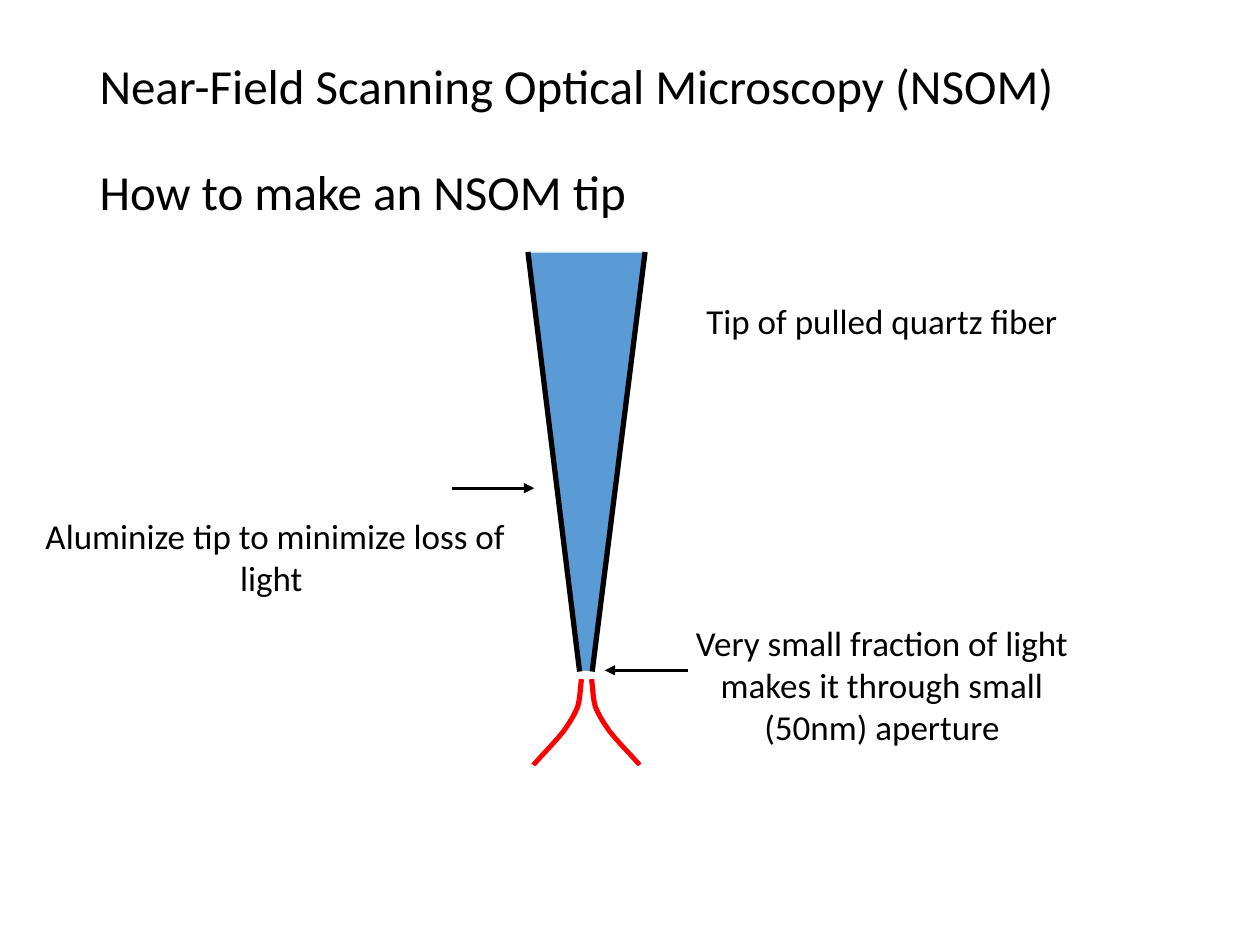
import pptx
import pptx.util
import pptx.dml.color
import pptx.enum.shapes
import pptx.enum.text
import pptx.oxml
import pptx.oxml.ns

Pt = pptx.util.Pt
Align = pptx.enum.text.PP_ALIGN
Anchor = pptx.enum.text.MSO_ANCHOR
RGB = pptx.dml.color.RGBColor.from_string

THEME = {
    "font": "Calibri", "head": 28, "label": 20,
    "ink": RGB("000000"), "glass": RGB("5B9BD5"),
    "light": RGB("FF0000"), "edge": RGB("FFFFFF"),
}

deck = pptx.Presentation()
deck.slide_width = pptx.util.Inches(10)
deck.slide_height = pptx.util.Inches(7.5)
unit = deck.slide_width // 100  # grid of 100 columns by 75 rows
slide = deck.slides.add_slide(deck.slide_layouts[5])
shapes = slide.shapes


def grid(*cells):
    return [round(cell * unit) for cell in cells]


def write(text, box, at, size, align=Align.CENTER, lead=1.0, gap=0):
    """Place the box on the grid and fill it, one paragraph per line of text."""
    box.left, box.top, box.width, box.height = grid(*at)
    frame = box.text_frame
    frame.text = text
    frame.word_wrap = True
    frame.vertical_anchor = Anchor.MIDDLE
    frame.auto_size = pptx.enum.text.MSO_AUTO_SIZE.NONE
    for i, para in enumerate(frame.paragraphs):
        para.alignment = align
        para.line_spacing = lead
        para.space_before = Pt(gap if i else 0)
        para.font.name = THEME["font"]
        para.font.size = Pt(size)
        para.font.color.rgb = THEME["ink"]


write("Near-Field Scanning Optical Microscopy (NSOM)\nHow to make an NSOM tip",
      shapes.title, (6.9, 4, 86.2, 14.5), THEME["head"],
      align=Align.LEFT, lead=0.9, gap=30)

# Fiber and the light leaving it, each laid down twice with a slight shift
mid, top, end = 46.5, 20, 53.3
wide, slim = 4.6, 0.5
bends = [  # Bezier pieces: distance from the fiber's axis, row
    [(0.4, 53.9), (0.5, 54.6), (0.5, 55.4), (0.7, 56.1)],
    [(0.7, 56.1), (1, 56.8), (1.3, 57.3), (1.8, 58)],
    [(1.8, 58), (2.4, 58.8), (3.8, 60.2), (4.2, 60.7)],
]
curve = [bends[0][0]]
for piece in bends:
    for t in (0.2, 0.4, 0.6, 0.8, 1):
        mix = ((1 - t)**3, 3 * t * (1 - t)**2, 3 * t**2 * (1 - t), t**3)
        curve.append([sum(m * p[axis] for m, p in zip(mix, piece))
                      for axis in (0, 1)])

for shift in (0, 0.1):
    axis = mid + shift
    rim = [grid(axis + dx, y) for dx, y in
           ((-wide, top), (-slim, end), (slim, end), (wide, top))]
    pen = shapes.build_freeform(*rim[0])
    pen.add_line_segments(rim[1:], close=True)
    fiber = pen.convert_to_shape()
    fiber.shadow.inherit = False
    fiber.fill.solid()
    fiber.fill.fore_color.rgb = THEME["glass"]
    fiber.line.color.rgb = THEME["edge"]
    fiber.line.width = Pt(0.75)

    rays = shapes.add_group_shape()
    for side in (-1, 1):
        dots = [grid(axis + side * dx, y) for dx, y in curve]
        pen = rays.shapes.build_freeform(*dots[0])
        pen.add_line_segments(dots[1:], close=False)
        ray = pen.convert_to_shape()
        ray.shadow.inherit = False
        ray.fill.background()
        ray.line.color.rgb = THEME["light"]
        ray.line.width = Pt(2.25)

# Arrows, then the aluminum coating on both sides of the fiber
for ends, width, arrow in (
    ((54.6, 53.2, 48, 53.2), 1.5, True),
    ((35.9, 38.75, 42.4, 38.75), 1.5, True),
    ((51.2, top, 47, end), 3, False),
    ((41.9, top, 46, end), 3, False),
):
    line = shapes.add_connector(
        pptx.enum.shapes.MSO_CONNECTOR.STRAIGHT, *grid(*ends))
    line.line.color.rgb = THEME["ink"]
    line.line.width = Pt(width)
    props = line._element.spPr
    if arrow:
        tip = pptx.oxml.parse_xml(
            "<a:tailEnd %s type='triangle'/>" % pptx.oxml.ns.nsdecls("a"))
        line.line._get_or_add_ln().append(tip)
    props.append(pptx.oxml.parse_xml(
        "<a:effectLst %s/>" % pptx.oxml.ns.nsdecls("a")))

for text, at in (
    ("Tip of pulled quartz fiber", (52.4, 23.2, 35.2, 4.4)),
    ("Very small fraction of light makes it through small (50nm) aperture",
     (52.4, 48.8, 35.2, 11.1)),
    ("Aluminize tip to minimize loss of light ", (2.3, 40.3, 39.1, 7.7)),
):
    write(text, shapes.add_textbox(*grid(*at)), at, THEME["label"])

deck.save("out.pptx")
